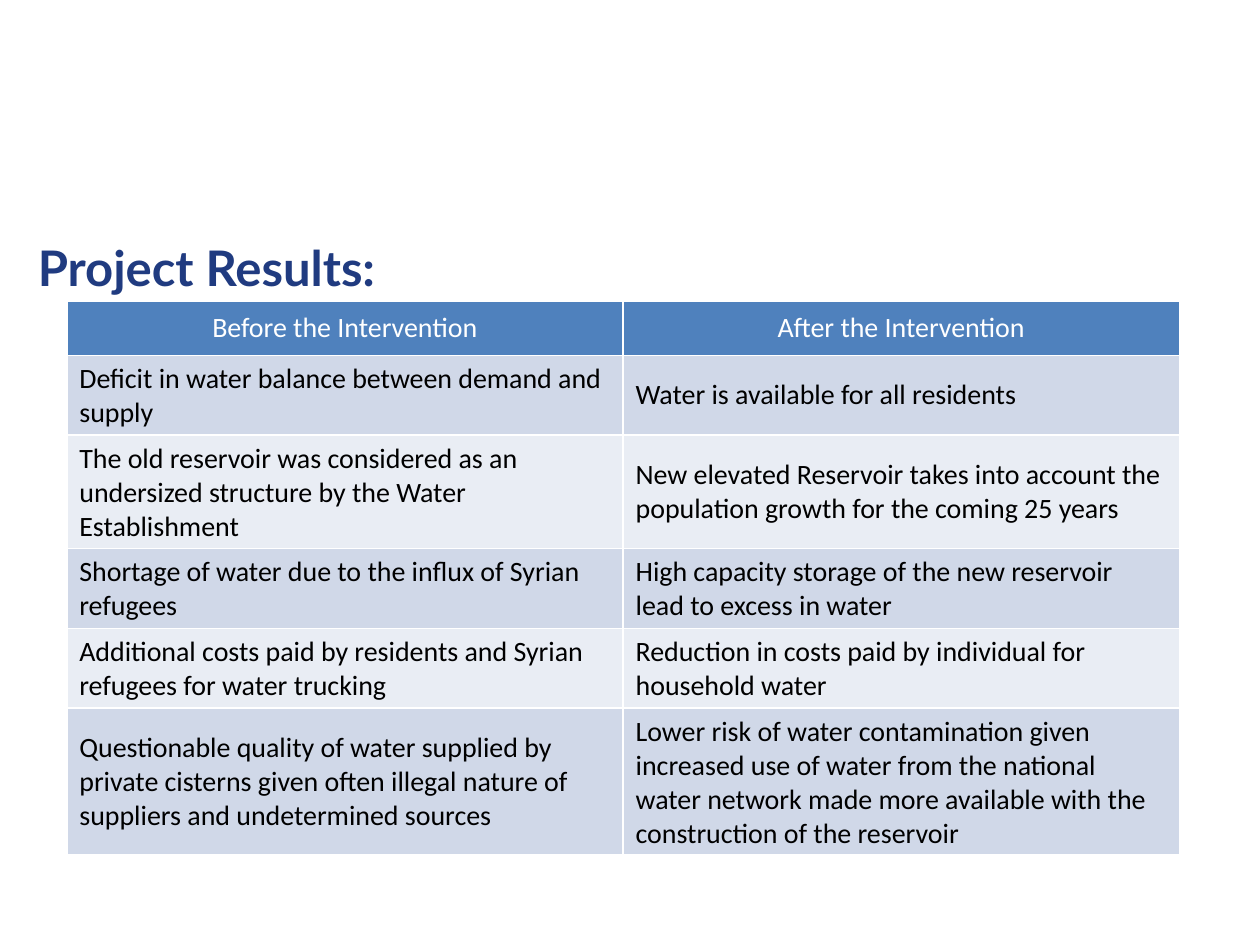
from lxml import etree
from pptx import Presentation
from pptx.dml.color import RGBColor
from pptx.enum.text import MSO_ANCHOR, PP_ALIGN
from pptx.oxml.ns import qn
from pptx.util import Inches, Pt

MIDDLE, BOTTOM = MSO_ANCHOR.MIDDLE, MSO_ANCHOR.BOTTOM
CENTER, LEFT = PP_ALIGN.CENTER, PP_ALIGN.LEFT
HEADER_FILL, BANDS = "4F81BD", ("E9EDF4", "D0D8E8")

ROWS = [
    ("Before the Intervention", "After the Intervention"),
    ("Deficit in water balance between demand and supply",
     "Water is available for all residents"),
    ("The old reservoir was considered as an undersized structure by the Water Establishment",
     "New elevated Reservoir takes into account the population growth for the coming 25 years"),
    ("Shortage of water due to the influx of Syrian refugees",
     "High capacity storage of the new reservoir lead to excess in water"),
    ("Additional costs paid by residents and Syrian refugees for water trucking",
     "Reduction in costs paid by individual for household water"),
    ("Questionable quality of water supplied by private cisterns given often illegal nature "
     "of suppliers and undetermined sources",
     "Lower risk of water contamination given increased use of water from the national water "
     "network made more available with the construction of the reservoir"),
]
ROW_HEIGHTS = (0.43, 0.6, 0.86, 0.6, 0.6, 1.11)


def add_run(p, text, font, size, color, bold=False):
    r = p.add_run()
    r.text = text
    r.font.name = font
    r.font.size = Pt(size)
    r.font.bold = bold
    r.font.color.rgb = RGBColor.from_string(color)


def add_borders(cell, color, width):
    """Line all four sides; the lines must precede the fill in tcPr."""
    tcPr = cell._tc.get_or_add_tcPr()
    for i, side in enumerate(("lnL", "lnR", "lnT", "lnB")):
        ln = etree.Element(qn(f"a:{side}"), w=str(Pt(width)))
        fill = etree.SubElement(ln, qn("a:solidFill"))
        etree.SubElement(fill, qn("a:srgbClr"), val=color)
        tcPr.insert(i, ln)


prs = Presentation()
prs.slide_width, prs.slide_height = Inches(10), Inches(7.5)
s = prs.slides.add_slide(prs.slide_layouts[6])

# Title
sp = s.shapes.add_textbox(Inches(0.23), Inches(1.53), Inches(3.42), Inches(0.87))
tf = sp.text_frame
tf.word_wrap = True
tf.vertical_anchor = BOTTOM
tf.margin_left = tf.margin_right = Inches(0.07)
tf.margin_top = tf.margin_bottom = Inches(0.04)
p = tf.paragraphs[0]
p.line_spacing = 0.9
add_run(p, "Project Results:", "Lato", 28, "203B80", bold=True)

# Before and after table
table = s.shapes.add_table(len(ROWS), 2, Inches(0.53), Inches(2.39),
                           Inches(8.83), Inches(sum(ROW_HEIGHTS))).table
for i, (texts, height) in enumerate(zip(ROWS, ROW_HEIGHTS)):
    table.rows[i].height = Inches(height)
    is_header = i == 0
    for j, text in enumerate(texts):
        cell = table.cell(i, j)
        cell.vertical_anchor = MIDDLE
        cell.fill.solid()
        cell.fill.fore_color.rgb = RGBColor.from_string(HEADER_FILL if is_header else BANDS[i % 2])
        add_borders(cell, "FFFFFF", 1)
        p = cell.text_frame.paragraphs[0]
        p.alignment = CENTER if is_header else LEFT
        add_run(p, text, "Calibri", 16, "FFFFFF" if is_header else "000000")

prs.save("out.pptx")
